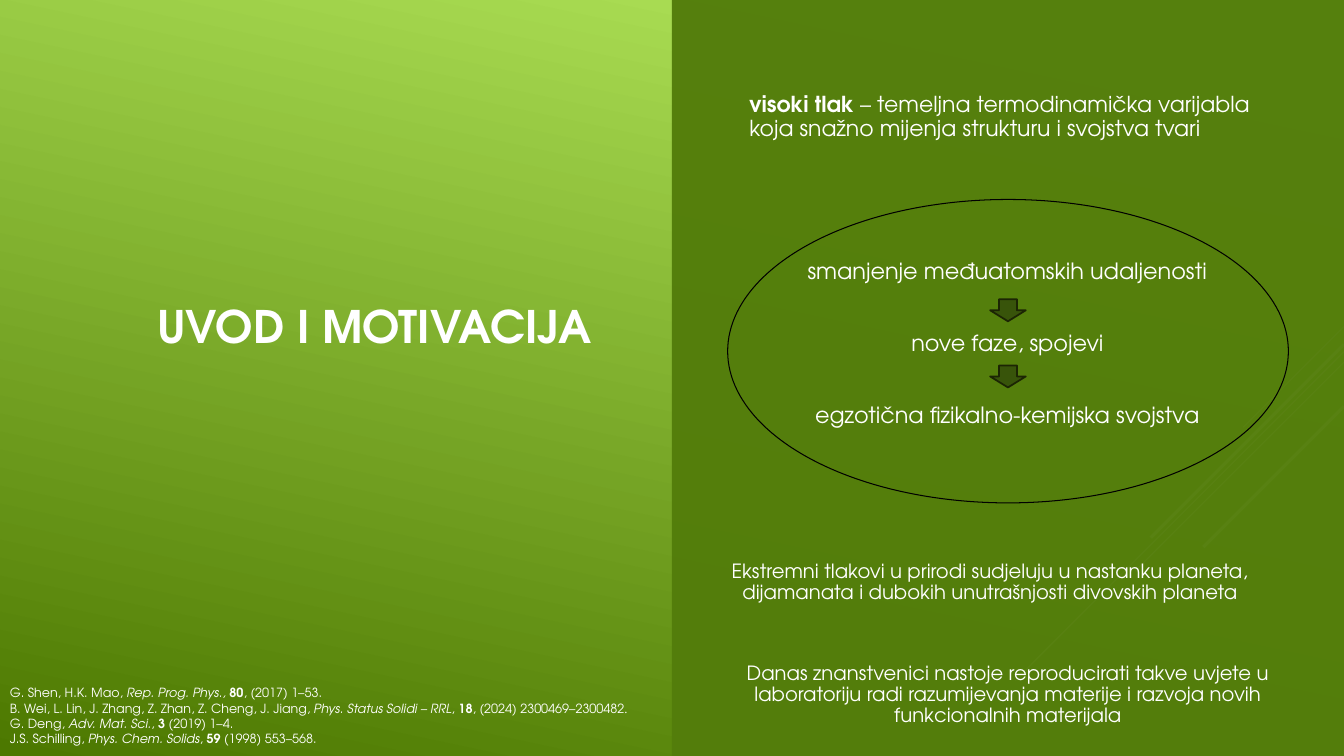
from lxml import etree
from pptx import Presentation
from pptx.dml.color import RGBColor
from pptx.enum.shapes import MSO_CONNECTOR, MSO_SHAPE
from pptx.enum.text import MSO_ANCHOR, MSO_AUTO_SIZE, PP_ALIGN
from pptx.oxml.ns import qn
from pptx.util import Pt

EMU_PER_PX = 9525
SLIDE_BOX = (0, 0, 1280, 720)
FONT = "TeX Gyre Adventor"
WHITE = "FFFFFF"
LEFT, CENTER, RIGHT = PP_ALIGN.LEFT, PP_ALIGN.CENTER, PP_ALIGN.RIGHT
TOP, MIDDLE = MSO_ANCHOR.TOP, MSO_ANCHOR.MIDDLE
NO_FIT = MSO_AUTO_SIZE.NONE
STRAIGHT = MSO_CONNECTOR.STRAIGHT
RECTANGLE, OVAL, DOWN_ARROW = MSO_SHAPE.RECTANGLE, MSO_SHAPE.OVAL, MSO_SHAPE.DOWN_ARROW

BOLD, ITALIC = {"bold": True}, {"italic": True}
RAYS = [(311, 96, 0.75), (335, 313, 0.75), (345, 199, 0.75), (328, 184, 2.25), (387, 134, 2.25)]
DEFINITION = [
    ("visoki tlak", BOLD),
    (" – temeljna termodinamička varijabla koja snažno mijenja strukturu i svojstva tvari", {}),
]
EFFECTS = [
    "smanjenje međuatomskih udaljenosti",
    "nove faze, spojevi",
    "egzotična fizikalno-kemijska svojstva",
]
NATURE = "Ekstremni tlakovi u prirodi sudjeluju u nastanku planeta, dijamanata i dubokih unutrašnjosti divovskih planeta"
LABORATORY = (
    "Danas znanstvenici nastoje reproducirati takve uvjete u laboratoriju "
    "radi razumijevanja materije i razvoja novih funkcionalnih materijala"
)
REFERENCES = [
    [("G. Shen, H.K. Mao, ", {}), ("Rep. Prog. Phys., ", ITALIC), ("80", BOLD), (", (2017) 1–53.", {})],
    [
        ("B. Wei, L. Lin, J. Zhang, Z. Zhan, Z. Cheng, J. Jiang, ", {}),
        ("Phys. Status Solidi – RRL", ITALIC), (", ", {}), ("18", BOLD),
        (", (2024) 2300469–2300482", {}), (".", {"name": "Times New Roman"}),
    ],
    [("G. Deng, ", {}), ("Adv. Mat. Sci.", ITALIC), (", ", {}), ("3", BOLD), (" (2019) 1–4.", {})],
    [("J.S. Schilling, ", {}), ("Phys. Chem. Solids", ITALIC), (", ", {}), ("59", BOLD), (" (1998) 553–568.", {})],
]


def px(length):
    """Turn a length in px into EMU."""
    return length * EMU_PER_PX


def color(hex_value):
    """Turn a hex string into a colour."""
    return RGBColor.from_string(hex_value)


def set_attributes(target, values):
    """Set every value of a dict on the target."""
    for name, value in values.items():
        setattr(target, name, value)


def place(shape, box):
    """Move a shape to a box given in px."""
    set_attributes(shape, dict(zip(("left", "top", "width", "height"), map(px, box))))


def within(box, left, top, width, height):
    """Return a box offset from the corner of an outer box."""
    return box[0] + left, box[1] + top, width, height


def write(shape, paragraphs, size, alignment, anchor=TOP, spacing=0.9, gap=0):
    """Fill a shape with paragraphs, each a list of text and format pairs."""
    frame = shape.text_frame
    set_attributes(frame, {"word_wrap": True, "auto_size": NO_FIT, "vertical_anchor": anchor})
    for index, runs in enumerate(paragraphs):
        paragraph = frame.add_paragraph() if index else frame.paragraphs[0]
        set_attributes(paragraph, {
            "alignment": alignment,
            "line_spacing": spacing,
            "space_before": Pt(gap if index else 0),
        })
        for text, format_values in runs:
            run = paragraph.add_run()
            run.text = text
            set_attributes(run.font, {"name": FONT, "size": Pt(size), **format_values})
            run.font.color.rgb = color(WHITE)


def add_text(slide, box, paragraphs, size, alignment, **options):
    """Add a text box and fill it."""
    text_box = slide.shapes.add_textbox(*map(px, box))
    write(text_box, paragraphs, size, alignment, **options)


def add_shape(slide, kind, box, fill=None, line=None, line_width=0.75):
    """Add a preset shape with optional fill and outline."""
    shape = slide.shapes.add_shape(kind, *map(px, box))
    shape.shadow.inherit = False
    if fill:
        shape.fill.solid()
        shape.fill.fore_color.rgb = color(fill)
    else:
        shape.fill.background()
    if line:
        shape.line.color.rgb = color(line)
        shape.line.width = Pt(line_width)
    else:
        shape.line.fill.background()
    return shape


def paint_background(slide):
    """Fill the slide with the green gradient."""
    fill = slide.background.fill
    fill.gradient()
    fill.gradient_angle = 258
    for stop, (position, hex_value) in zip(fill.gradient_stops, [(0.1, "ACDF55"), (1, "4C7800")]):
        stop.position = position
        stop.color.rgb = color(hex_value)


def draw_rays(slide, box):
    """Draw the diagonal lines that start at the right edge of the box."""
    right = box[0] + box[2]
    for top, reach, width in RAYS:
        start = box[1] + top
        ray = slide.shapes.add_connector(STRAIGHT, *map(px, (right, start, right - reach, start + reach)))
        ray.line.color.rgb = color(WHITE)
        ray.line.width = Pt(width)
        etree.SubElement(ray.element.spPr, qn("a:effectLst"))


def build_heading(slide, box):
    """Place the title and the references in the left half."""
    title = slide.shapes.title
    place(title, within(box, 67, 72, 506, 483))
    write(title, [[("UVOD I MOTIVACIJA", BOLD)]], 32, RIGHT, anchor=MIDDLE)
    add_text(slide, within(box, 0, 648, 641, 72), REFERENCES, 9, LEFT, spacing=1.0)


def build_definition(body, box):
    """Place the definition in the body placeholder, without a bullet."""
    place(body, box)
    properties = body.text_frame.paragraphs[0]._p.get_or_add_pPr()
    properties.set("marL", "0")
    properties.set("indent", "0")
    etree.SubElement(properties, qn("a:buNone"))
    write(body, [DEFINITION], 15.7, LEFT, anchor=MIDDLE)


def build_effects(slide, box):
    """Place the ellipse with its three steps and the arrows between them."""
    steps = [[(effect, {})] for effect in EFFECTS]
    add_text(slide, within(box, 19, 53, 495, 196), steps, 16, CENTER, gap=34.3)
    for index in range(len(EFFECTS) - 1):
        arrow_box = within(box, 250, 95 + 63 * index, 34, 21)
        add_shape(slide, DOWN_ARROW, arrow_box, "38540A", "1C2504", 1.25)
    add_shape(slide, OVAL, box, line="000000")


def build_panel(slide, box):
    """Place the dark panel and its contents in the right half."""
    panel = add_shape(slide, RECTANGLE, box, "537D0B")
    panel_color = next(panel.element.spPr.iter(qn("a:srgbClr")))
    etree.SubElement(panel_color, qn("a:alpha"), val="97000")
    body = slide.placeholders[1]
    panel.element.addnext(body.element)
    build_definition(body, within(box, 64, 72, 513, 80))
    build_effects(slide, within(box, 53, 190, 534, 289))
    add_text(slide, within(box, 3, 530, 600, 51), [[(NATURE, {})]], 14, CENTER)
    add_text(slide, within(box, 27, 627, 586, 71), [[(LABORATORY, {})]], 14, CENTER)


def main():
    """Build the slide and save the presentation."""
    presentation = Presentation()
    set_attributes(presentation, {"slide_width": px(SLIDE_BOX[2]), "slide_height": px(SLIDE_BOX[3])})
    slide = presentation.slides.add_slide(presentation.slide_layouts[1])
    paint_background(slide)
    draw_rays(slide, SLIDE_BOX)
    half = SLIDE_BOX[2] // 2
    build_heading(slide, (0, 0, half, SLIDE_BOX[3]))
    build_panel(slide, (half, 0, half, SLIDE_BOX[3]))
    presentation.save("out.pptx")


if __name__ == "__main__":
    main()
